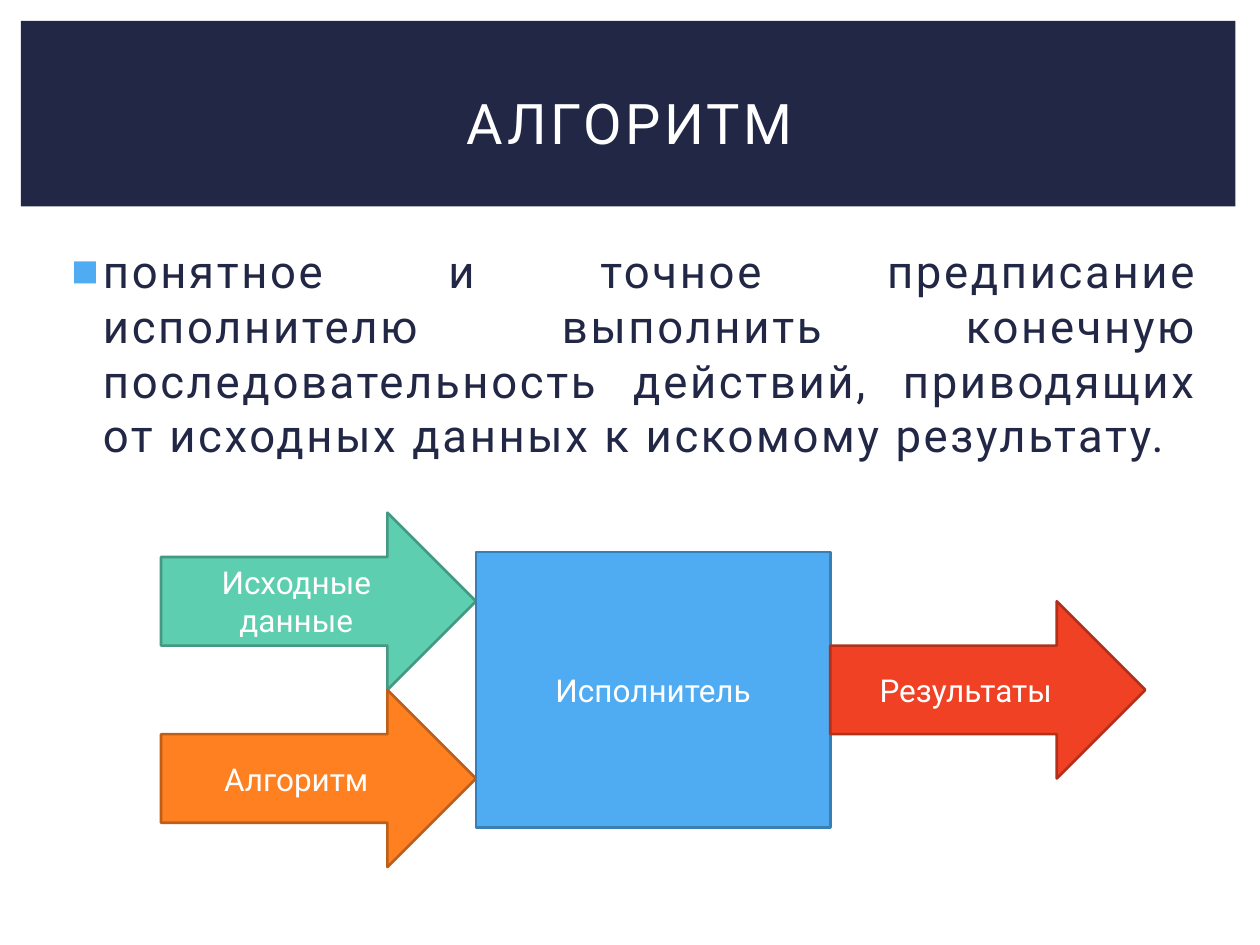
from dataclasses import dataclass

from lxml import etree
from pptx import Presentation
from pptx.dml.color import RGBColor
from pptx.enum.shapes import MSO_SHAPE
from pptx.enum.text import MSO_ANCHOR, MSO_AUTO_SIZE, PP_ALIGN
from pptx.oxml.ns import qn
from pptx.util import Pt

RECTANGLE = MSO_SHAPE.RECTANGLE
RIGHT_ARROW = MSO_SHAPE.RIGHT_ARROW
CENTER = PP_ALIGN.CENTER
JUSTIFY = PP_ALIGN.JUSTIFY
TOP = MSO_ANCHOR.TOP
MIDDLE = MSO_ANCHOR.MIDDLE
NO_AUTOFIT = MSO_AUTO_SIZE.NONE

FONT = "Roboto"
NAVY = "212745"
WHITE = "FFFFFF"
BLUE = "4FACF3"

ARROW_WIDTH, ARROW_HEIGHT = 180, 101.25
BOX_WIDTH, BOX_HEIGHT = 202.5, 157.5
DIAGRAM_LEFT, DIAGRAM_MIDDLE = 92, 394.25
BOX_LEFT = DIAGRAM_LEFT + ARROW_WIDTH
RESULT_LEFT = BOX_LEFT + BOX_WIDTH


@dataclass
class Block:
    kind: int
    left: float
    top: float
    width: float
    height: float
    fill: str
    outline: str | None = None
    label: str = ""


BAND = Block(RECTANGLE, 12, 12, 694, 106, NAVY)
BLOCKS = [
    Block(RIGHT_ARROW, DIAGRAM_LEFT, DIAGRAM_MIDDLE - ARROW_HEIGHT,
          ARROW_WIDTH, ARROW_HEIGHT, "5DCEAF", "459881", "Исходные данные"),
    Block(RIGHT_ARROW, DIAGRAM_LEFT, DIAGRAM_MIDDLE,
          ARROW_WIDTH, ARROW_HEIGHT, "FF8021", "BD5F18", "Алгоритм"),
    Block(RECTANGLE, BOX_LEFT, DIAGRAM_MIDDLE - BOX_HEIGHT / 2,
          BOX_WIDTH, BOX_HEIGHT, BLUE, "3A7FB4", "Исполнитель"),
    Block(RIGHT_ARROW, RESULT_LEFT, DIAGRAM_MIDDLE - ARROW_HEIGHT / 2,
          ARROW_WIDTH, ARROW_HEIGHT, "F14124", "B2301B", "Результаты"),
]


def color(value: str) -> RGBColor:
    return RGBColor.from_string(value)


def write_text(shape, text: str, size: float, text_color: str,
               alignment: int, anchor: int, spacing: float = 0):
    frame = shape.text_frame
    frame.word_wrap = True
    frame.auto_size = NO_AUTOFIT
    frame.vertical_anchor = anchor
    paragraph = frame.paragraphs[0]
    paragraph.alignment = alignment
    run = paragraph.add_run()
    run.text = text
    run.font.name = FONT
    run.font.size = Pt(size)
    run.font.color.rgb = color(text_color)
    if spacing:
        run.font._element.set("spc", str(round(spacing * 100)))
    return paragraph


def place(shape, left: float, top: float, width: float, height: float) -> None:
    shape.left, shape.top = Pt(left), Pt(top)
    shape.width, shape.height = Pt(width), Pt(height)


def set_bullet(paragraph, character: str, bullet_color: str,
               margin: float, indent: float) -> None:
    properties = paragraph._p.get_or_add_pPr()
    properties.set("marL", str(Pt(margin)))
    properties.set("indent", str(Pt(indent)))
    bullet = etree.SubElement(properties, qn("a:buClr"))
    etree.SubElement(bullet, qn("a:srgbClr"), val=bullet_color)
    etree.SubElement(properties, qn("a:buFont"), typeface="Arial")
    etree.SubElement(properties, qn("a:buChar"), char=character)


def draw_block(slide, block: Block):
    shape = slide.shapes.add_shape(
        block.kind, Pt(block.left), Pt(block.top), Pt(block.width), Pt(block.height))
    shape.shadow.inherit = False
    shape.fill.solid()
    shape.fill.fore_color.rgb = color(block.fill)
    if block.outline:
        shape.line.color.rgb = color(block.outline)
        shape.line.width = Pt(1.5)
    else:
        shape.line.fill.background()
    if block.label:
        write_text(shape, block.label, 18, WHITE, CENTER, MIDDLE)
    return shape


def main() -> None:
    presentation = Presentation()
    presentation.slide_width, presentation.slide_height = Pt(720), Pt(540)
    slide = presentation.slides.add_slide(presentation.slide_layouts[1])

    band = draw_block(slide, BAND)
    slide.shapes._spTree.insert(2, band._element)

    title = slide.shapes.title
    place(title, 30, 28, 660, 83)
    write_text(title, "АЛГОРИТМ", 32, WHITE, CENTER, MIDDLE, spacing=2)

    body = slide.placeholders[1]
    place(body, 30, 135.5, 662, 347)
    definition = write_text(
        body,
        "понятное и точное предписание исполнителю выполнить конечную "
        "последовательность действий, приводящих от исходных данных "
        "к искомому результату.",
        26, NAVY, JUSTIFY, TOP, spacing=1.5)
    set_bullet(definition, "■", BLUE, margin=21.6, indent=-18)

    for block in BLOCKS:
        draw_block(slide, block)

    presentation.save("out.pptx")


if __name__ == "__main__":
    main()
